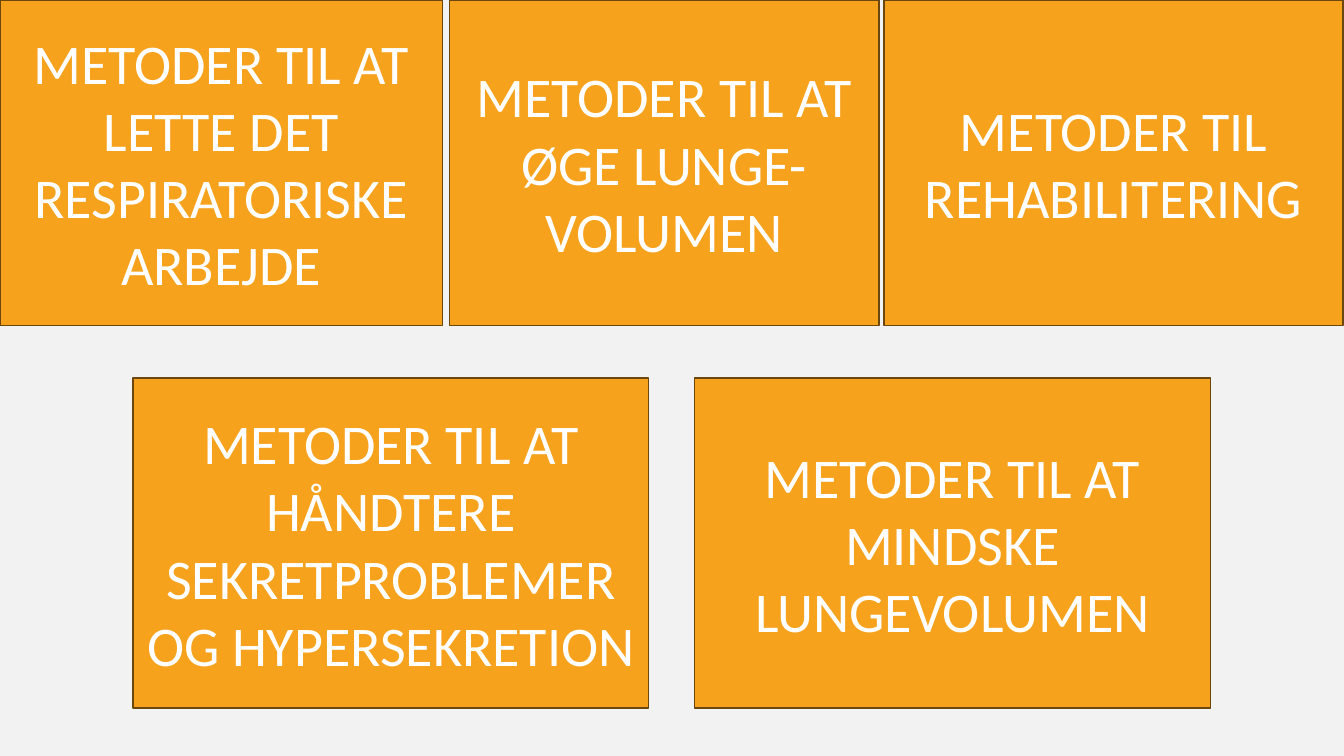
from pptx import Presentation
from pptx.dml.color import RGBColor
from pptx.enum.shapes import MSO_SHAPE as Shape
from pptx.enum.text import MSO_ANCHOR as Anchor, PP_ALIGN as Align
from pptx.util import Cm, Pt

# Each row: top, height, then boxes as (left, width, text), in cm
ROWS = [
    (0, 8.2, [
        (0, 11.15, "METODER TIL AT LETTE DET RESPIRATORISKE ARBEJDE"),
        (11.33, 10.82, "METODER TIL AT ØGE LUNGE-VOLUMEN"),
        (22.28, 11.57, "METODER TIL REHABILITERING"),
    ]),
    (9.53, 8.31, [
        (3.35, 13, "METODER TIL AT HÅNDTERE SEKRETPROBLEMER OG HYPERSEKRETION"),
        (17.5, 13, "METODER TIL AT MINDSKE LUNGEVOLUMEN"),
    ]),
]
BACKGROUND, ORANGE, BROWN, WHITE = "F2F2F2", "F6A21D", "6C470D", "FFFFFF"


def paint(fill, color):
    fill.solid()
    fill.fore_color.rgb = RGBColor.from_string(color)


def write(box, text, size=40, font="Calibri", color=WHITE, align=Align.CENTER):
    frame = box.text_frame
    frame.word_wrap = True
    frame.vertical_anchor = Anchor.MIDDLE
    para = frame.paragraphs[0]
    para.alignment = align
    span = para.add_run()
    span.text = text
    span.font.size = Pt(size)
    span.font.name = font
    paint(span.font.fill, color)


def add_method(page, left, top, width, height, text):
    box = page.shapes.add_shape(Shape.RECTANGLE, Cm(left), Cm(top), Cm(width), Cm(height))
    box.shadow.inherit = False
    paint(box.fill, ORANGE)
    paint(box.line.fill, BROWN)
    box.line.width = Pt(1)
    write(box, text)


def main():
    deck = Presentation()
    deck.slide_width, deck.slide_height = Cm(33.87), Cm(19.05)
    page = deck.slides.add_slide(deck.slide_layouts[6])
    paint(page.background.fill, BACKGROUND)
    for top, height, methods in ROWS:
        for left, width, text in methods:
            add_method(page, left, top, width, height, text)
    deck.save("out.pptx")


if __name__ == "__main__":
    main()
